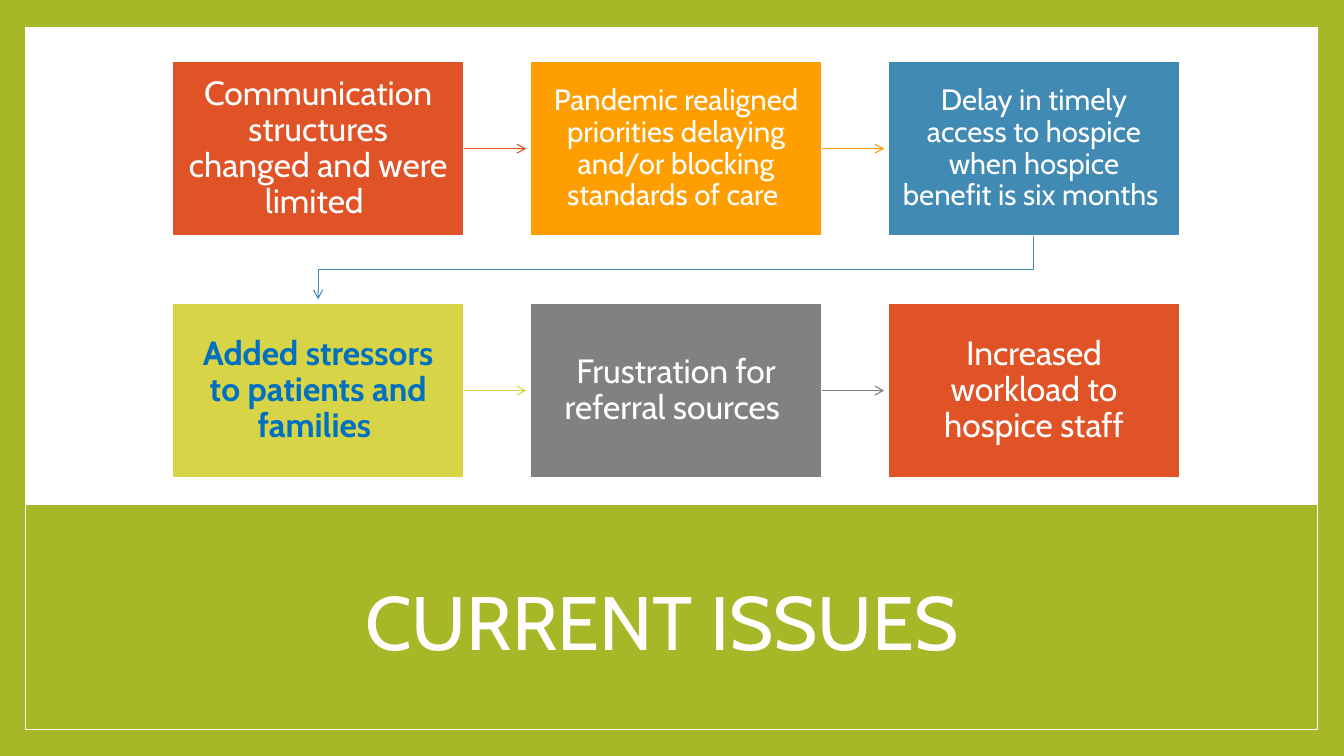
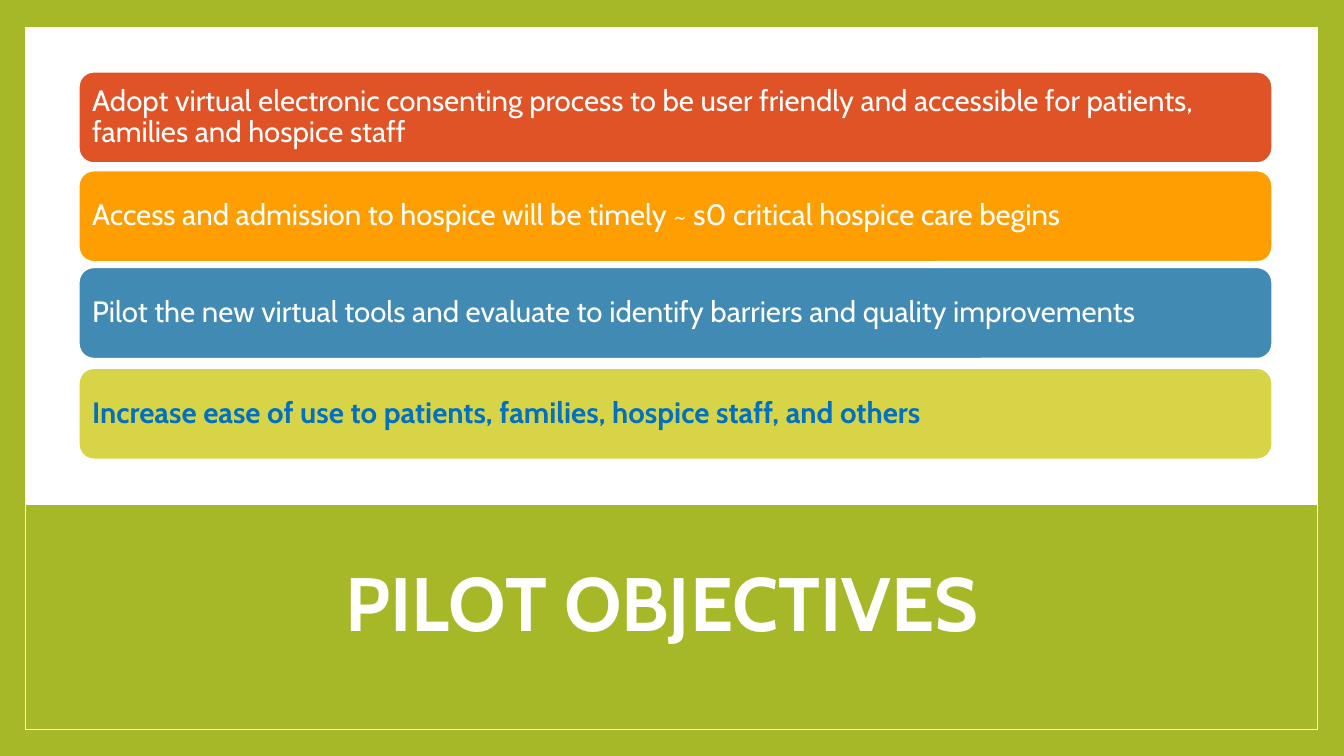
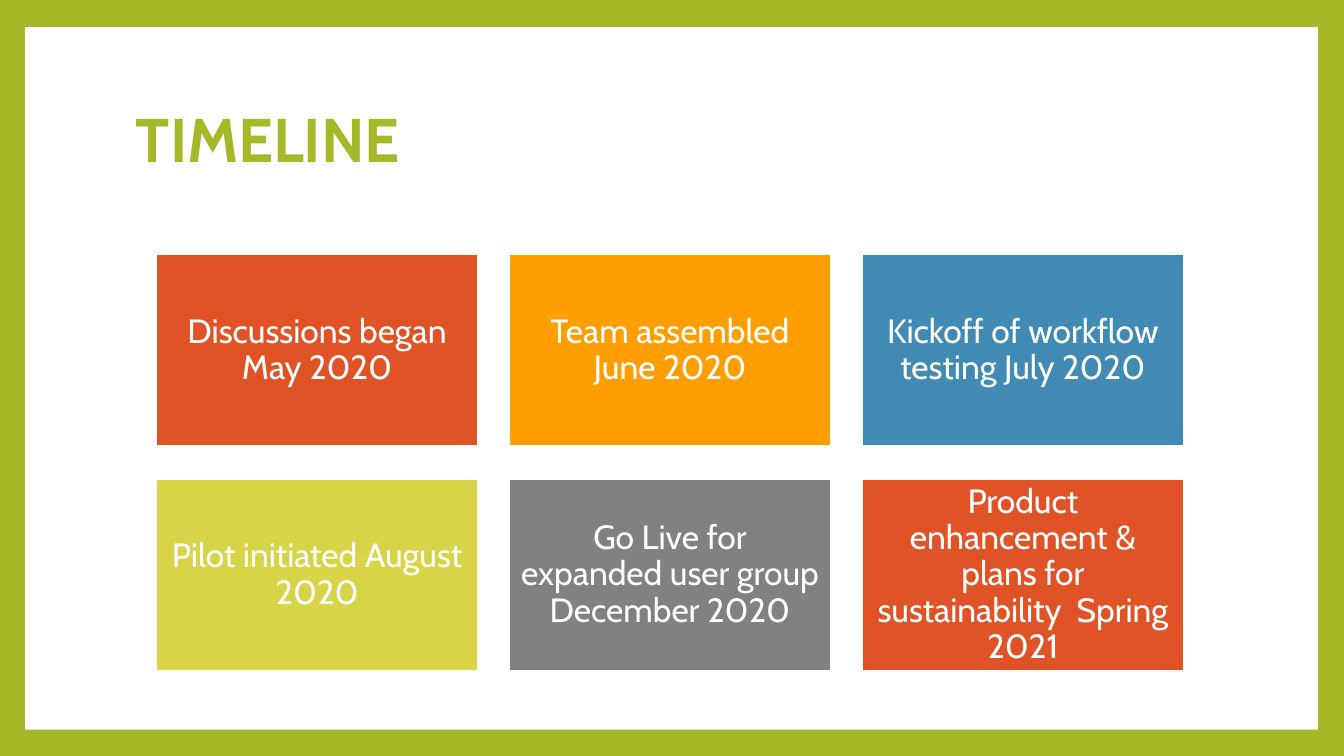
"""Build three hospice pilot slides: issues, objectives and timeline."""
from dataclasses import dataclass
from itertools import cycle
from typing import Any

from pptx import Presentation
from pptx import slide as sl
from pptx import util as u
from pptx.dml import color, line as ln
from pptx.enum import shapes, text
from pptx.oxml import ns, xmlchemy as xc
from pptx.shapes import autoshape as auto
from pptx.oxml import parse_xml

HUE = {
    "green": "A6B727",
    "white": "FFFFFF",
    "red": "DF5327",
    "gold": "FE9E00",
    "blue": "418AB3",
    "lime": "D7D447",
    "grey": "818183",
    "ink": "0070C0",
}
ORDER = ("red", "gold", "blue", "lime", "grey")
FONT = "Cabin"
KIND = shapes.MSO_SHAPE
CENTER = text.PP_ALIGN.CENTER
LEFT = text.PP_ALIGN.LEFT


@dataclass(frozen=True)
class Area:
    """A rectangle in inches."""
    left: float
    top: float
    width: float
    height: float

    def emu(self) -> tuple[u.Length, ...]:
        """Return the four lengths."""
        return tuple(map(u.Inches, (self.left, self.top, self.width, self.height)))


@dataclass(frozen=True)
class Style:
    """How a text is set."""
    size: float = 24
    hue: str = "white"
    bold: bool = False
    align: text.PP_ALIGN = CENTER
    side: float = 0.1
    edge: float = 0.1


@dataclass(frozen=True)
class Grid:
    """Rows of three equal boxes."""
    first: Area
    across: float
    down: float

    def cell(self, index: int) -> Area:
        """Return the area of one box."""
        row, col = divmod(index, 3)
        base = self.first
        return Area(base.left + col * self.across, base.top + row * self.down,
                    base.width, base.height)


@dataclass(frozen=True)
class Item:
    """A text in a box or bar."""
    words: str
    style: Style
    top: float = 0


FRAME = Area(0.25, 0.27, 12.82, 6.97)
BAND = Area(0.25, 5, 12.82, 2.24)

STEP = Style(side=0.14, edge=0.15)
TIGHT = Style(21, side=0.14, edge=0.15)
STRONG = Style(24, "ink", True, side=0.14, edge=0.15)
ISSUES = (
    Item("Communication structures changed and were limited ", STEP),
    Item("Pandemic realigned priorities delaying and/or blocking standards of care ", TIGHT),
    Item("Delay in timely access to hospice when hospice benefit is six months ", TIGHT),
    Item("Added stressors to patients and families ", STRONG),
    Item("Frustration for referral sources ", STEP),
    Item("Increased workload to hospice staff", STEP),
)

GOAL = Style(21, align=LEFT, side=0.09, edge=0.09)
KEY = Style(21, "ink", True, LEFT, 0.09, 0.09)
GOALS = (
    Item("Adopt virtual electronic consenting process to be user friendly and "
         "accessible for patients, families and hospice staff", GOAL, 0.71),
    Item("Access and admission to hospice will be timely ~ s0 critical hospice care begins",
         GOAL, 1.69),
    Item("Pilot the new virtual tools and evaluate to identify barriers and "
         "quality improvements", GOAL, 2.65),
    Item("Increase ease of use to patients, families, hospice staff, and others", KEY, 3.65),
)

DATE = Style()
DATES = tuple(Item(words, DATE) for words in (
    "Discussions began May 2020",
    "Team assembled June 2020",
    "Kickoff of workflow testing July 2020",
    "Pilot initiated August 2020",
    "Go Live for expanded user group December 2020",
    "Product enhancement & plans for sustainability  Spring 2021",
))


def rgb(name: str) -> color.RGBColor:
    """Look up a named colour."""
    return color.RGBColor.from_string(HUE[name])


def apply(target: Any, values: dict[str, Any]) -> None:
    """Set each format value on the target."""
    for name, value in values.items():
        setattr(target, name, value)


def write(frame: Any, words: str, style: Style) -> None:
    """Put one styled paragraph in a text frame."""
    side, edge = u.Inches(style.side), u.Inches(style.edge)
    apply(frame, {
        "word_wrap": True, "vertical_anchor": text.MSO_ANCHOR.MIDDLE,
        "margin_left": side, "margin_right": side,
        "margin_top": edge, "margin_bottom": edge,
    })
    para = frame.paragraphs[0]
    apply(para, {"alignment": style.align, "line_spacing": 0.9})
    run = para.add_run()
    run.text = words
    apply(run.font, {"name": FONT, "size": u.Pt(style.size), "bold": style.bold})
    run.font.color.rgb = rgb(style.hue)


def stroke(line: ln.LineFormat, hue: str, width: float) -> None:
    """Colour a line and set its width."""
    line.color.rgb = rgb(hue)
    line.width = u.Pt(width)


def block(page: sl.Slide, area: Area, hue: str, width: float = 0,
          kind: shapes.MSO_SHAPE = KIND.RECTANGLE) -> auto.Shape:
    """Draw a filled shape, edged in white if a width is given."""
    shape = page.shapes.add_shape(kind, *area.emu())
    shape.shadow.inherit = False
    shape.fill.solid()
    shape.fill.fore_color.rgb = rgb(hue)
    if width:
        stroke(shape.line, "white", width)
    else:
        shape.line.fill.background()
    return shape


def begin(deck: Any, words: str, area: Area, style: Style, band: bool) -> sl.Slide:
    """Add a framed slide with its title."""
    page = deck.slides.add_slide(deck.slide_layouts[6])
    page.background.fill.solid()
    page.background.fill.fore_color.rgb = rgb("green")
    block(page, FRAME, "white")
    if band:
        block(page, BAND, "green", 1)
    write(page.shapes.add_textbox(*area.emu()).text_frame, words, style)
    return page


def tip(props: xc.BaseOxmlElement) -> None:
    """Put an open arrowhead at the end of a line."""
    head = parse_xml(f'<a:tailEnd {ns.nsdecls("a")} type="arrow"/>')
    props.find(ns.qn("a:ln")).append(head)


def arrow(page: sl.Slide, box: auto.Shape, hue: str) -> None:
    """Draw an arrow from a box towards the next one."""
    start = box.left + box.width
    mid = box.top + box.height // 2
    link = page.shapes.add_connector(
        shapes.MSO_CONNECTOR.STRAIGHT, start, mid, start + u.Inches(0.62), mid)
    link.begin_connect(box, 3)
    stroke(link.line, hue, 0.79)
    props = link.element.spPr
    tip(props)
    props.append(parse_xml(f'<a:effectLst {ns.nsdecls("a")}/>'))


def turn(page: sl.Slide, last: auto.Shape, first: auto.Shape, hue: str) -> None:
    """Draw the bent arrow from the end of one row to the next row."""
    x, y = last.left + last.width // 2, last.top + last.height
    end = first.left + first.width // 2
    bend = y + u.Inches(0.33)
    pen = page.shapes.build_freeform(x, y)
    pen.add_line_segments(
        [(x, bend), (end, bend), (end, first.top - u.Inches(0.04))], close=False)
    route = pen.convert_to_shape()
    route.shadow.inherit = False
    route.fill.background()
    stroke(route.line, hue, 0.79)
    tip(route.element.spPr)


def tiles(page: sl.Slide, grid: Grid, items: tuple[Item, ...]) -> list[auto.Shape]:
    """Draw the items as coloured boxes on a grid."""
    boxes = []
    for index, (item, hue) in enumerate(zip(items, cycle(ORDER))):
        box = block(page, grid.cell(index), hue, 1.5)
        write(box.text_frame, item.words, item.style)
        boxes.append(box)
    return boxes


def issues(deck: Any) -> None:
    """Build the flow of current issues."""
    page = begin(deck, "CURRENT ISSUES ", Area(1.25, 5.67, 10.8, 1.09),
                 Style(54, edge=0.05), True)
    boxes = tiles(page, Grid(Area(1.71, 0.61, 2.89, 1.73), 3.55, 2.4), ISSUES)
    for index, (box, hue) in enumerate(zip(boxes, ORDER)):
        if index == 2:
            turn(page, box, boxes[3], hue)
        else:
            arrow(page, box, hue)


def goals(deck: Any) -> None:
    """Build the bars of pilot objectives."""
    page = begin(deck, "PILOT OBJECTIVES ", Area(1.25, 5.28, 10.8, 1.48),
                 Style(54, bold=True, edge=0.05), True)
    for item, hue in zip(GOALS, ORDER):
        bar = block(page, Area(0.78, item.top, 11.84, 0.91), hue, 1.5,
                    KIND.ROUNDED_RECTANGLE)
        write(bar.text_frame, item.words, item.style)


def dates(deck: Any) -> None:
    """Build the timeline boxes."""
    page = begin(deck, "TIMELINE ", Area(1.25, 0.67, 10.8, 1.48),
                 Style(44, "green", True, LEFT, edge=0.05), False)
    tiles(page, Grid(Area(1.55, 2.52, 3.19, 1.91), 3.5, 2.23), DATES)


def main() -> None:
    """Build and save the deck."""
    deck = Presentation()
    apply(deck, {"slide_width": u.Inches(13.33), "slide_height": u.Inches(7.5)})
    for build in (issues, goals, dates):
        build(deck)
    deck.save("out.pptx")


if __name__ == "__main__":
    main()
